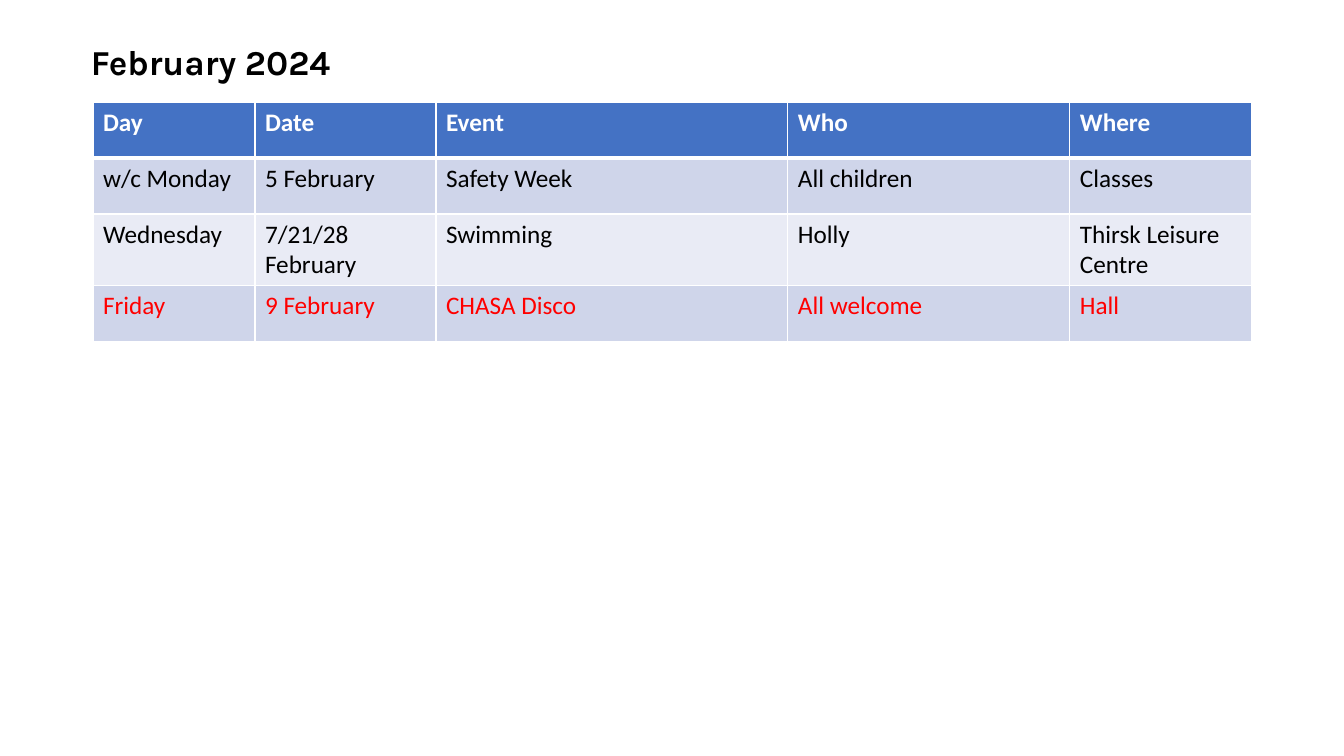
from lxml import etree
from pptx import Presentation
from pptx.dml.color import RGBColor
from pptx.enum.text import MSO_AUTO_SIZE
from pptx.oxml.ns import qn
from pptx.util import Pt

FIT_SHAPE = MSO_AUTO_SIZE.SHAPE_TO_FIT_TEXT
EMU_PER_PX = 914400 / 100.8
PAGE_SIZE = (1344, 756)
TITLE_BOX = (81, 36, 449, 52)
TABLE_BOX = (93, 102, 1159, 224)
COLUMN_WIDTHS = (162, 181, 352, 282, 182)
WHITE, BLACK, RED, BLUE = "FFFFFF", "000000", "FF0000", "4472C4"
BAND_FILLS = ("E9EBF5", "CFD5EA")
HEADINGS = ("Day", "Date", "Event", "Who", "Where")
EVENTS = (
    (BLACK, ("w/c Monday", "5 February", "Safety Week", "All children", "Classes")),
    (BLACK, ("Wednesday", "7/21/28 February", "Swimming", "Holly", "Thirsk Leisure Centre")),
    (RED, ("Friday", "9 February", "CHASA Disco", "All welcome", "Hall")),
)


def px(length):
    return round(length * EMU_PER_PX)


def color(value):
    return RGBColor.from_string(value)


def write(frame, text, font, size, ink, bold):
    frame.text = text
    span = frame.paragraphs[0].runs[0]
    span.font.name = font
    span.font.size = Pt(size)
    span.font.color.rgb = color(ink)
    span.font.bold = bold


def set_borders(cell, bottom_width):
    properties = cell._tc.get_or_add_tcPr()
    widths = {"a:lnL": 1, "a:lnR": 1, "a:lnT": 1, "a:lnB": bottom_width}
    for position, (side, width) in enumerate(widths.items()):
        line = etree.Element(qn(side), w=str(Pt(width)))
        fill = etree.SubElement(line, qn("a:solidFill"))
        etree.SubElement(fill, qn("a:srgbClr"), val=WHITE)
        properties.insert(position, line)


def add_title(page, box):
    title = page.shapes.add_textbox(*map(px, box))
    frame = title.text_frame
    frame.word_wrap = True
    frame.auto_size = FIT_SHAPE
    write(frame, "February 2024", "Karla", 25, BLACK, True)


def add_calendar(page, box):
    rows = ((WHITE, HEADINGS),) + EVENTS
    calendar = page.shapes.add_table(len(rows), len(HEADINGS), *map(px, box)).table
    for column, width in zip(calendar.columns, COLUMN_WIDTHS):
        column.width = px(width)
    for row_index, (ink, texts) in enumerate(rows):
        is_header = row_index == 0
        for column_index, text in enumerate(texts):
            cell = calendar.cell(row_index, column_index)
            write(cell.text_frame, text, "Calibri", 18, ink, is_header)
            cell.fill.solid()
            cell.fill.fore_color.rgb = color(BLUE if is_header else BAND_FILLS[row_index % 2])
            set_borders(cell, 3 if is_header else 1)


def main():
    deck = Presentation()
    deck.slide_width, deck.slide_height = map(px, PAGE_SIZE)
    page = deck.slides.add_slide(deck.slide_layouts[6])
    add_calendar(page, TABLE_BOX)
    add_title(page, TITLE_BOX)
    deck.save("out.pptx")


if __name__ == "__main__":
    main()
